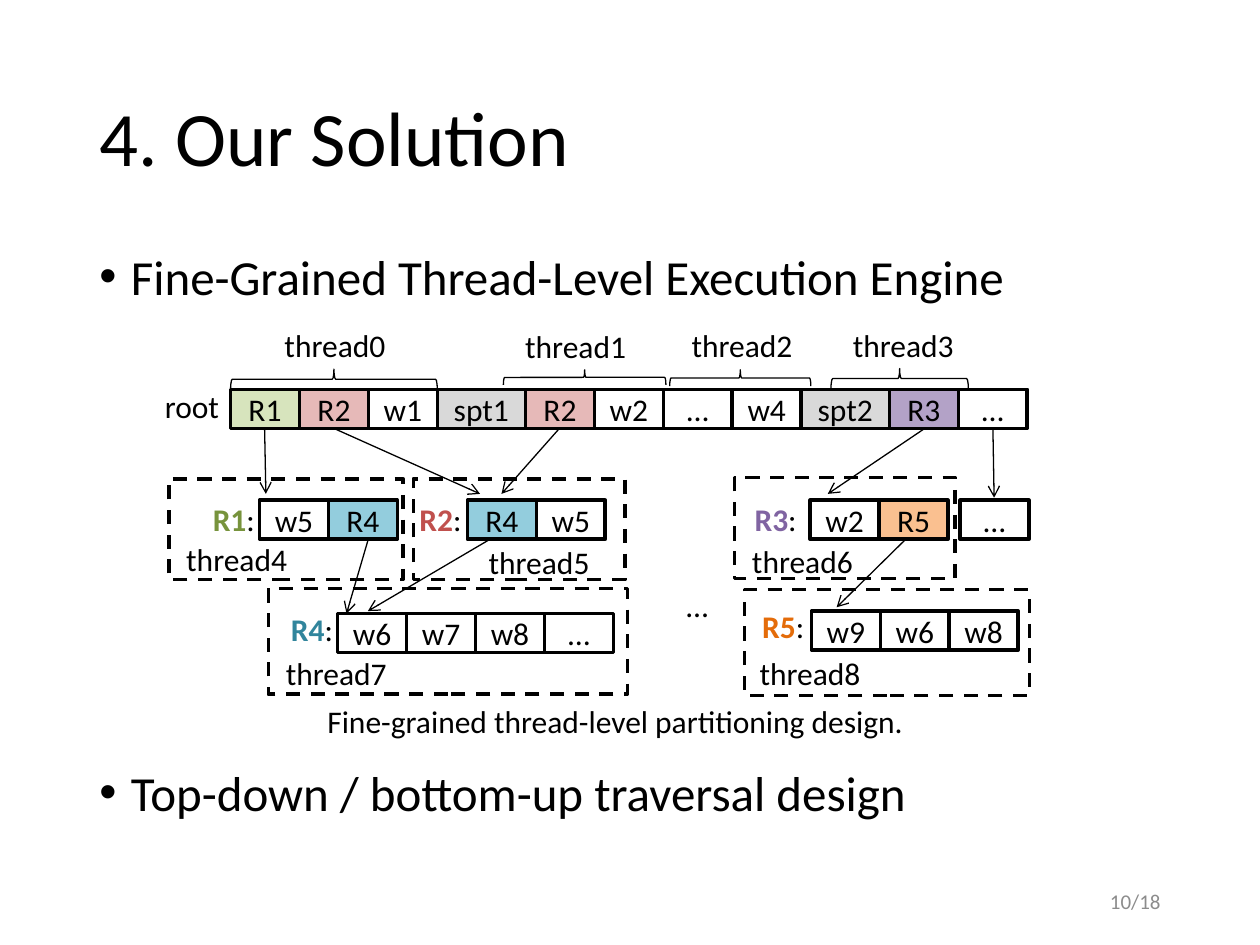
from dataclasses import dataclass
from lxml.etree import SubElement
from pptx import Presentation
from pptx.dml.color import RGBColor
from pptx.enum.dml import MSO_LINE
from pptx.enum.shapes import MSO_CONNECTOR, MSO_SHAPE
from pptx.enum.text import MSO_ANCHOR, PP_ALIGN
from pptx.oxml.ns import qn
from pptx.util import Inches, Pt


@dataclass(frozen=True)
class Theme:
    """Colours, type sizes and line widths of the slide."""
    font: str = "Calibri"
    title: int = 44
    bullet: int = 28
    label: int = 18
    footer: int = 12
    ink: str = "000000"
    paper: str = "FFFFFF"
    muted: str = "8C8C8C"
    split: str = "D9D9D9"
    thin: float = 0.75
    thick: float = 2


theme = Theme()
NODE_FILL = {"R1": "D7E4BD", "R2": "E6B9B8", "R3": "B3A2C7", "R4": "93CDDD",
             "R5": "FAC090", "spt1": theme.split, "spt2": theme.split}
NODE_INK = {"R1": "77933C", "R2": "C0504D", "R3": "8064A2", "R4": "31859C",
            "R5": "E46C0A"}

deck = Presentation()
deck.slide_width, deck.slide_height = Inches(10), Inches(7.5)
slide = deck.slides.add_slide(deck.slide_layouts[6])

# The grid has 100 columns and 75 rows of equal size.
UNIT = deck.slide_width // 100
CELL, SPLIT_CELL, CELL_HEIGHT = 5.47, 7, 3.1
LABEL_HEIGHT = 4


def write(place, runs, size=theme.label, frame=None, **paragraph_format):
    """Write (text, colour, bold) runs into a frame, or a new box at place."""
    if frame is None:
        frame = slide.shapes.add_textbox(*(int(n * UNIT) for n in place)).text_frame
        frame.margin_right = 0
    frame.word_wrap = True
    paragraph = frame.paragraphs[0]
    if paragraph.runs:
        paragraph = frame.add_paragraph()
    for name, value in paragraph_format.items():
        setattr(paragraph, name, value)
    for text, colour, bold in runs:
        run = paragraph.add_run()
        run.text = text
        for name, value in {"name": theme.font, "size": Pt(size), "bold": bold}.items():
            setattr(run.font, name, value)
        run.font.color.rgb = RGBColor.from_string(colour)
    return frame


def outline(kind, place, width, fill=None):
    """Add an outlined shape, filled only when a colour is given."""
    shape = slide.shapes.add_shape(kind, *(int(n * UNIT) for n in place))
    shape.shadow.inherit = False
    shape.line.color.rgb = RGBColor.from_string(theme.ink)
    shape.line.width = Pt(width)
    if fill:
        shape.fill.solid()
        shape.fill.fore_color.rgb = RGBColor.from_string(fill)
    else:
        shape.fill.background()
    return shape


# Title, bullets and page number
title = write((6.9, 4, 86.2, 14.5), [("4. Our Solution", theme.ink, False)],
              theme.title, line_spacing=0.9)
title.vertical_anchor = MSO_ANCHOR.MIDDLE

bullets = None
for text, gap in (("Fine-Grained Thread-Level Execution Engine", 10),
                  ("Top-down / bottom-up traversal design", 268)):
    bullets = write((6.9, 20, 86.2, 47.6), [(text, theme.ink, False)], theme.bullet,
                    bullets, line_spacing=0.8, space_before=Pt(gap))
for paragraph in bullets.paragraphs:
    properties = paragraph._p.get_or_add_pPr()
    properties.set("marL", str(Inches(0.25)))
    properties.set("indent", str(-Inches(0.25)))
    SubElement(properties, qn("a:buFont"), typeface="Arial")
    SubElement(properties, qn("a:buChar"), char="•")

page = write((70.6, 69.5, 22.5, 4), [("10/18", theme.muted, False)],
             theme.footer, alignment=PP_ALIGN.RIGHT)
page.vertical_anchor = MSO_ANCHOR.MIDDLE
page.margin_right = Inches(0.1)

# Arrows from a node to its children
for start_x, start_y, end_x, end_y in (
        (39.4, 42.5, 29.2, 48.5), (29.7, 41.2, 27.5, 48.7),
        (21, 34, 21.1, 39.2), (26.5, 34, 38.1, 39.2), (44.4, 34, 39.8, 39.2),
        (73.4, 34, 65.7, 39.2), (78.8, 33.8, 78.9, 39.5), (73, 41.7, 66.4, 48.2)):
    arrow = slide.shapes.add_connector(
        MSO_CONNECTOR.STRAIGHT,
        *(int(n * UNIT) for n in (start_x, start_y, end_x, end_y)))
    arrow.line.color.rgb = RGBColor.from_string(theme.ink)
    arrow.line.width = Pt(theme.thin)
    drawing = arrow.element.spPr
    SubElement(drawing.find(qn("a:ln")), qn("a:tailEnd"), type="arrow")
    SubElement(drawing, qn("a:effectLst"))

# Dashed areas, one for each thread
for place in ((13.4, 38, 18.6, 8), (32.8, 38, 16.8, 8), (58.3, 37.9, 17.5, 8),
              (21.3, 46.7, 28.5, 8.4), (59.1, 46.8, 22.6, 8.4)):
    area = outline(MSO_SHAPE.RECTANGLE, place, theme.thick)
    area.line.dash_style = MSO_LINE.DASH

# Rows of cells
for left, top, words in (
        (18.3, 30.9, "R1 R2 w1 spt1 R2 w2 … w4 spt2 R3 …"),
        (20.6, 39.7, "w5 R4"), (37.1, 39.7, "R4 w5"),
        (64.3, 39.7, "w2 R5"), (76.2, 39.7, "…"),
        (26.8, 48.7, "w6 w7 w8 …"), (64.4, 48.5, "w9 w6 w8")):
    for word in words.split():
        width = SPLIT_CELL if word.startswith("spt") else CELL
        cell = outline(MSO_SHAPE.RECTANGLE, (left, top, width, CELL_HEIGHT),
                       theme.thick, NODE_FILL.get(word, theme.paper))
        for side in ("left", "right", "top", "bottom"):
            setattr(cell.text_frame, f"margin_{side}", 0)
        cell.text_frame.vertical_anchor = MSO_ANCHOR.MIDDLE
        write(None, [(word, theme.ink, False)], frame=cell.text_frame,
              alignment=PP_ALIGN.CENTER)
        left += width

# Braces over the root row, turned to open downwards
for left, top, depth, span in ((25.7, 21.9, 1.6, 16.4), (45.8, 23.5, 1.2, 12.9),
                               (58.1, 24.4, 1.3, 11.2), (70.6, 24.6, 1.6, 10.9)):
    brace = outline(MSO_SHAPE.LEFT_BRACE, (left, top, depth, span), theme.thin)
    brace.rotation = 90

# Names of nodes and threads
for node, left, top in (("R1", 15.9, 39.2), ("R2", 32.3, 39.2), ("R3", 58.9, 39.2),
                        ("R4", 22.1, 47.9), ("R5", 59.5, 47.7)):
    write((left, top, CELL, LABEL_HEIGHT),
          [(node, NODE_INK[node], True), (":", theme.ink, False)])

thread_places = ((21.6, 25.4), (40.7, 25.5), (53.9, 25.4), (66.7, 25.4), (13.8, 42.4),
                 (37.8, 42.6), (58.7, 42.5), (21.7, 51.4), (59.3, 51.4))
thread_labels = [(f"thread{number}", left, top, 10.6)
                 for number, (left, top) in enumerate(thread_places)]
for text, left, top, width in thread_labels + [
        ("root", 12.1, 30.2, 7), ("…", 53.5, 46, 7),
        ("Fine-grained thread-level partitioning design.", 25, 55.2, 51)]:
    write((left, top, width, LABEL_HEIGHT), [(text, theme.ink, False)])

deck.save("out.pptx")
